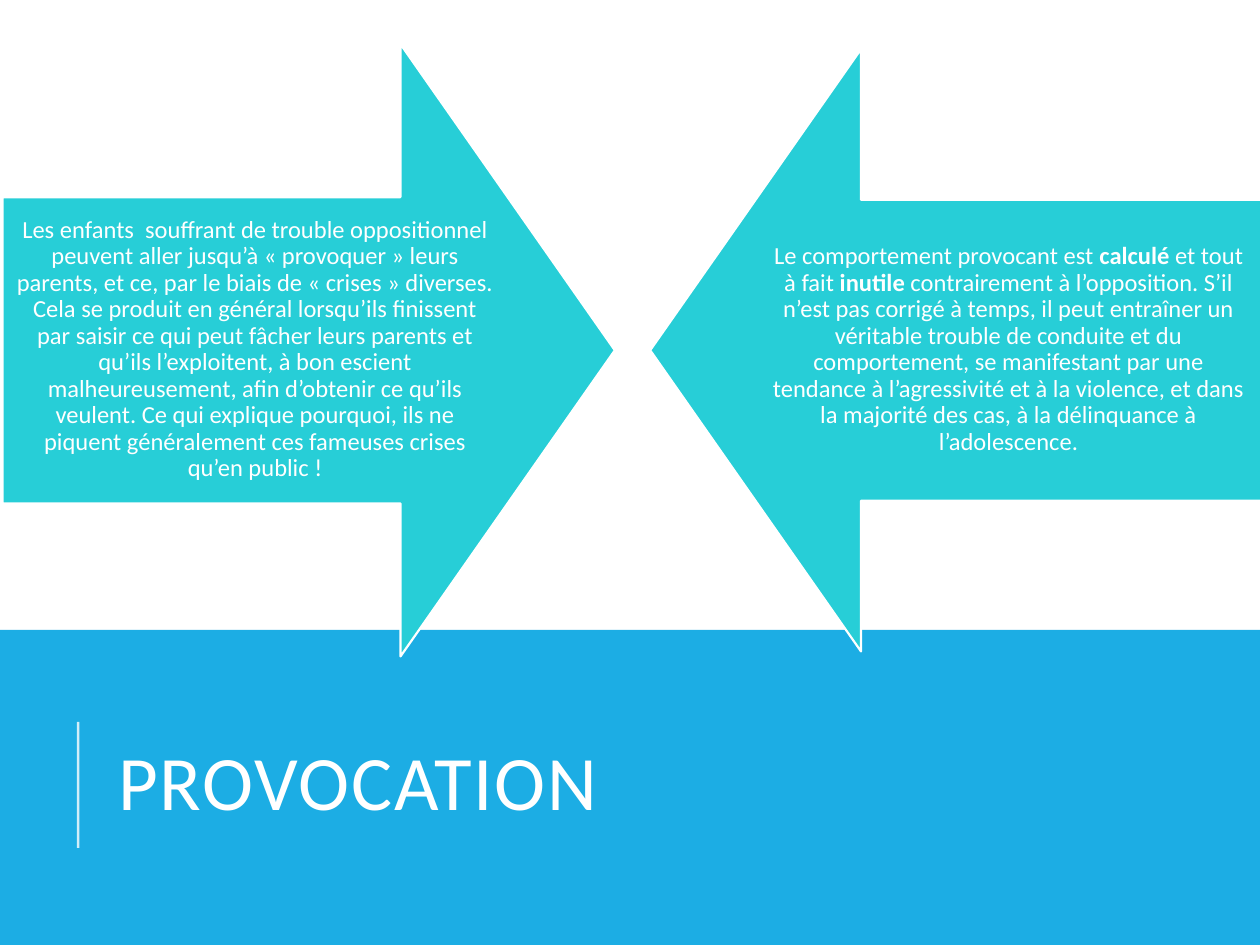
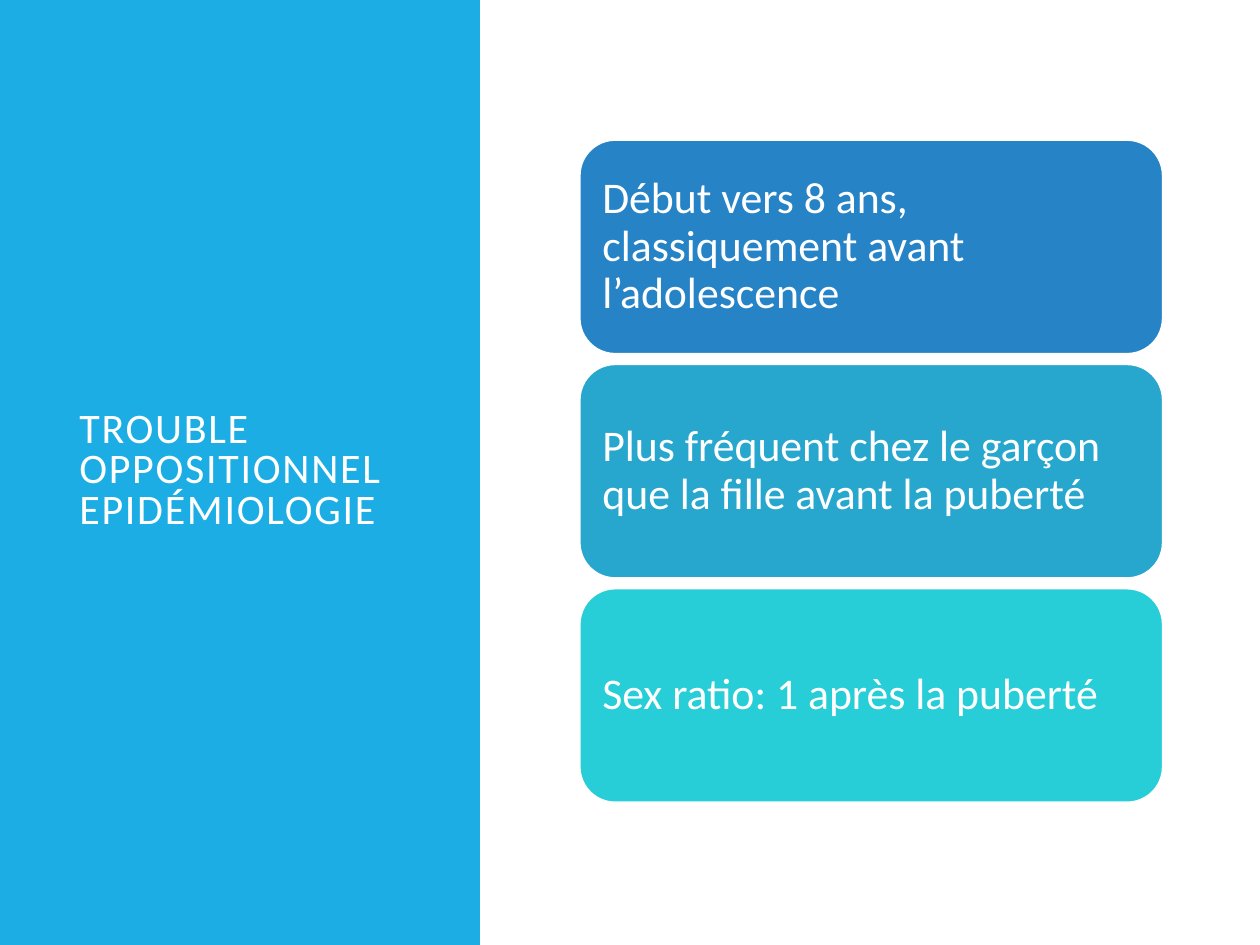
from lxml.etree import SubElement
from pptx import Presentation
from pptx.dml.color import RGBColor
from pptx.enum.shapes import MSO_CONNECTOR, MSO_SHAPE
from pptx.enum.text import MSO_ANCHOR, MSO_AUTO_SIZE, PP_ALIGN
from pptx.oxml.ns import qn
from pptx.util import Emu, Pt

WHITE = RGBColor(0xFF, 0xFF, 0xFF)
SKY = RGBColor(0x1C, 0xAD, 0xE4)
BLUE = RGBColor(0x26, 0x83, 0xC6)
TEAL = RGBColor(0x27, 0xA7, 0xCE)
TURQUOISE = RGBColor(0x27, 0xCE, 0xD7)

FONT = "Calibri"
PX = 9144  # 100 px to the inch
TITLE_ONLY = 5


def px(*lengths):
    return [Emu(length * PX) for length in lengths]


class Deck:
    """Holds the shared style and the slide being built."""

    def __init__(self, width, height):
        self.prs = Presentation()
        self.prs.slide_width, self.prs.slide_height = px(width, height)
        self.slide = None

    def new_slide(self):
        layout = self.prs.slide_layouts[TITLE_ONLY]
        self.slide = self.prs.slides.add_slide(layout)

    def shape(self, kind, box, fill, outlined=True):
        shape = self.slide.shapes.add_shape(kind, *px(*box))
        shape.shadow.inherit = False
        shape.fill.solid()
        shape.fill.fore_color.rgb = fill
        if outlined:
            shape.line.color.rgb = WHITE
            shape.line.width = Pt(1.25)
        else:
            shape.line.fill.background()
        return shape

    def band(self, box):
        self.shape(MSO_SHAPE.RECTANGLE, box, SKY, outlined=False)

    def add_text(self, frame, runs, size, align=PP_ALIGN.LEFT, inset=10, leading=0.9):
        """Fill a frame with (text, bold) runs."""
        frame.word_wrap = True
        frame.auto_size = MSO_AUTO_SIZE.NONE
        frame.vertical_anchor = MSO_ANCHOR.MIDDLE
        (frame.margin_left, frame.margin_top,
         frame.margin_right, frame.margin_bottom) = px(*[inset] * 4)
        paragraph = frame.paragraphs[0]
        paragraph.alignment = align
        paragraph.line_spacing = leading
        for text, bold in runs:
            run = paragraph.add_run()
            run.text = text
            run.font.name = FONT
            run.font.size = Pt(size)
            run.font.bold = bold
            run.font.color.rgb = WHITE

    def title(self, lines, box, size):
        title = self.slide.shapes.title
        title.left, title.top, title.width, title.height = px(*box)
        # Bring the title in front of the band
        title.element.getparent().append(title.element)
        paragraph = title.text_frame.paragraphs[0]
        for number, line in enumerate(lines):
            if number:
                paragraph.add_line_break()
            self.add_text(title.text_frame, [(line, False)], size, leading=0.8)
        for properties in title.element.iter(qn("a:rPr")):
            properties.set("spc", "100")

    def rule(self, x, top, bottom):
        rule = self.slide.shapes.add_connector(
            MSO_CONNECTOR.STRAIGHT, *px(x, top, x, bottom))
        rule.line.color.rgb = WHITE
        rule.line.width = Pt(1.5)
        properties = rule.element.find(qn("p:spPr"))
        color = properties.find(".//" + qn("a:srgbClr"))
        SubElement(color, qn("a:alpha"), val="80000")
        SubElement(properties, qn("a:effectLst"))

    def arrow(self, box, rotation, text_box, runs):
        arrow = self.shape(MSO_SHAPE.DOWN_ARROW, box, TURQUOISE)
        arrow.rotation = rotation
        arrow.adjustments[0] = 0.5
        arrow.adjustments[1] = 0.35
        argument = self.slide.shapes.add_textbox(*px(*text_box))
        self.add_text(argument.text_frame, runs, 14, PP_ALIGN.CENTER, inset=11)

    def card(self, box, fill, text):
        card = self.shape(MSO_SHAPE.ROUNDED_RECTANGLE, box, fill)
        self.add_text(card.text_frame, [(text, False)], 25)


def provocation(deck):
    deck.new_slide()
    deck.band((0, 500, 1000, 250))
    deck.title(["PROVOCATION"], (84, 544, 797, 164), 44)
    deck.rule(62, 573, 673)

    # Two facing arrows
    deck.arrow((2, 35, 486, 486), 270, (2, 156, 401, 243), [
        ("Les enfants  souffrant de trouble oppositionnel peuvent aller "
         "jusqu’à « provoquer » leurs parents, et ce, par le biais de "
         "« crises » diverses. Cela se produit en général lorsqu’ils "
         "finissent par saisir ce qui peut fâcher leurs parents et qu’ils "
         "l’exploitent, à bon escient malheureusement, afin d’obtenir ce "
         "qu’ils veulent. Ce qui explique pourquoi, ils ne piquent "
         "généralement ces fameuses crises qu’en public !", False),
    ])
    deck.arrow((520, 35, 478, 486), 90, (599, 158, 403, 239), [
        ("Le comportement provocant est ", False),
        ("calculé", True),
        (" et tout à fait", False),
        (" inutile", True),
        (" contrairement à l’opposition. S’il n’est pas corrigé à temps, "
         "il peut entraîner un véritable trouble de conduite et du "
         "comportement, se manifestant par une tendance à l’agressivité et "
         "à la violence, et dans la majorité des cas, à la délinquance à "
         "l’adolescence.", False),
    ])


def epidemiology(deck):
    deck.new_slide()
    deck.band((0, 0, 381, 750))
    deck.title(["TROUBLE OPPOSITIONNEL", "EPIDÉMIOLOGIE"], (53, 70, 280, 609), 24)

    # Stacked cards at an even pitch
    facts = [
        (BLUE, "Début vers 8 ans, classiquement avant l’adolescence"),
        (TEAL, "Plus fréquent chez le garçon que la fille avant la puberté"),
        (TURQUOISE, "Sex ratio: 1 après la puberté"),
    ]
    first_top, card_height, gap = 111, 170, 8
    for row, (fill, fact) in enumerate(facts):
        top = first_top + row * (card_height + gap)
        deck.card((460, top, 463, card_height), fill, fact)


def main():
    deck = Deck(1000, 750)
    provocation(deck)
    epidemiology(deck)
    deck.prs.save("out.pptx")


if __name__ == "__main__":
    main()
